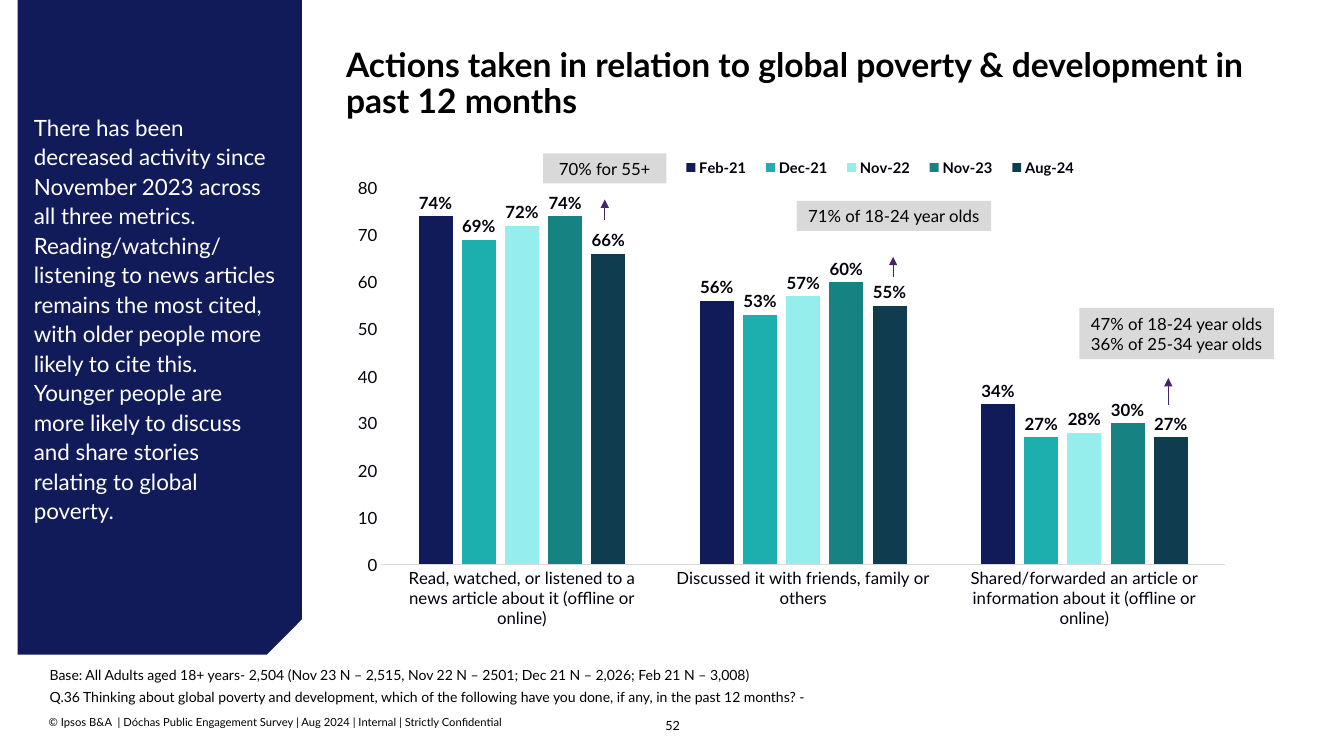
from pptx import Presentation
from pptx.chart.data import CategoryChartData
from pptx.dml.color import RGBColor
from pptx.enum.chart import XL_CHART_TYPE, XL_LABEL_POSITION, XL_LEGEND_POSITION, XL_TICK_MARK
from pptx.enum.shapes import MSO_CONNECTOR, MSO_SHAPE
from pptx.enum.text import MSO_ANCHOR, MSO_AUTO_SIZE, PP_ALIGN
from pptx.oxml import parse_xml
from pptx.oxml.ns import nsdecls, qn
from pptx.util import Pt
from lxml.etree import SubElement

FONT = "Lato"
BLACK = RGBColor(0x00, 0x00, 0x00)
WHITE = RGBColor(0xFF, 0xFF, 0xFF)
CHART_TEXT = RGBColor(0x00, 0x00, 0x0C)
GREY = RGBColor(0xD9, 0xD9, 0xD9)
NAVY = RGBColor(0x12, 0x1B, 0x5A)
PURPLE = RGBColor(0x45, 0x25, 0x67)

CATEGORIES = [
    "Read, watched, or listened to a news article about it (offline or online)",
    "Discussed it with friends, family or others",
    "Shared/forwarded an article or information about it (offline or online)",
]
WAVES = [
    ("Feb-21", (74, 56, 34), NAVY),
    ("Dec-21", (69, 53, 27), RGBColor(0x1D, 0xAF, 0xAD)),
    ("Nov-22", (72, 57, 28), RGBColor(0x96, 0xEE, 0xEC)),
    ("Nov-23", (74, 60, 30), RGBColor(0x16, 0x83, 0x82)),
    ("Aug-24", (66, 55, 27), RGBColor(0x10, 0x3C, 0x50)),
]
# Callout lines, box (left, top, width, height), arrow (x, start y, end y)
CALLOUTS = [
    (["70% for 55+"], (388, 109.5, 88, 21.5), (432, 157, 142.5)),
    (["71% of 18-24 year olds"], (569, 143.5, 139, 21.5), (638, 198, 183.5)),
    (["47% of 18-24 year olds", "36% of 25-34 year olds"], (771, 220, 139, 36.5), (834.5, 289, 270)),
]
SUMMARY = (
    "There has been decreased activity since November 2023 across all three metrics. "
    "Reading/watching/ listening to news articles remains the most cited, with older people "
    "more likely to cite this. Younger people are more likely to discuss and share stories "
    "relating to global poverty."
)
NOTES = [
    "Base: All Adults aged 18+ years- 2,504 (Nov 23 N – 2,515, Nov 22 N – 2501; "
    "Dec 21 N – 2,026; Feb 21 N – 3,008)",
    "Q.36 Thinking about global poverty and development, which of the following have you done, "
    "if any, in the past 12 months? -",
]
COPYRIGHT = "© Ipsos B&A  | Dóchas Public Engagement Survey | Aug 2024 | Internal | Strictly Confidential"


def format_font(font, size, color=BLACK, bold=False):
    font.name = FONT
    font.size = Pt(size)
    font.bold = bold
    font.color.rgb = color


def place(shape, left, top, width, height):
    shape.left, shape.top, shape.width, shape.height = map(Pt, (left, top, width, height))


def write(shape, lines, size, color=BLACK, bold=False, align=PP_ALIGN.LEFT, anchor=MSO_ANCHOR.MIDDLE,
          spacing=1.0, after=0, margins=(7.2, 3.6, 7.2, 3.6), wrap=True):
    frame = shape.text_frame
    frame.auto_size = MSO_AUTO_SIZE.NONE
    frame.word_wrap = wrap
    frame.vertical_anchor = anchor
    frame.margin_left, frame.margin_top, frame.margin_right, frame.margin_bottom = map(Pt, margins)
    for index, line in enumerate(lines):
        paragraph = frame.add_paragraph() if index else frame.paragraphs[0]
        paragraph.text = line
        paragraph.alignment = align
        paragraph.line_spacing = spacing
        paragraph.space_before = Pt(0)
        paragraph.space_after = Pt(after)
        properties = paragraph._p.get_or_add_pPr()
        properties.set("marL", "0")
        properties.set("indent", "0")
        SubElement(properties, qn("a:buNone"))
        format_font(paragraph.font, size, color, bold)


def add_text(slide, box, lines, size, **formatting):
    write(slide.shapes.add_textbox(*map(Pt, box)), lines, size, margins=(0, 0, 0, 0), **formatting)


def add_filled_shape(slide, kind, box, color):
    shape = slide.shapes.add_shape(kind, *map(Pt, box))
    shape.shadow.inherit = False
    shape.fill.solid()
    shape.fill.fore_color.rgb = color
    shape.line.fill.background()
    return shape


def add_summary_panel(slide):
    """Turn the shape so its cut corner is bottom right, and turn the text back upright."""
    panel = add_filled_shape(slide, MSO_SHAPE.SNIP_1_RECTANGLE, (-120.25, 131.75, 468.75, 203), NAVY)
    panel.rotation = 90
    panel.adjustments[0] = 0.124
    write(panel, [SUMMARY], 16, color=WHITE, spacing=1.1, margins=(11.5, 5.75, 11.5, 11.5))
    panel.text_frame._txBody.bodyPr.set("vert", "vert270")


def add_arrow(slide, x, start, end):
    arrow = slide.shapes.add_connector(MSO_CONNECTOR.STRAIGHT, Pt(x), Pt(start), Pt(x), Pt(end))
    arrow.line.color.rgb = PURPLE
    arrow.line.width = Pt(0.5)
    SubElement(arrow.line._get_or_add_ln(), qn("a:tailEnd"), type="triangle")
    SubElement(arrow._element.spPr, qn("a:effectLst"))


def add_callout(slide, lines, box, arrow):
    callout = add_filled_shape(slide, MSO_SHAPE.RECTANGLE, box, GREY)
    write(callout, lines, 12, align=PP_ALIGN.CENTER, wrap=False)
    add_arrow(slide, *arrow)


def set_layout(element, before, left, top, width, height, inner=False):
    """Fix a chart part at fractions of the chart area."""
    for old in element.findall(qn("c:layout")):
        element.remove(old)
    values = {"xMode": "edge", "yMode": "edge", "x": left, "y": top, "w": width, "h": height}
    target = '<c:layoutTarget val="inner"/>' if inner else ""
    parts = "".join(f'<c:{name} val="{value}"/>' for name, value in values.items())
    layout = parse_xml(
        f'<c:layout {nsdecls("c")}><c:manualLayout>{target}{parts}</c:manualLayout></c:layout>')
    element.find(qn(before)).addprevious(layout)


def format_axes(chart):
    for axis in (chart.category_axis, chart.value_axis):
        axis.major_tick_mark = axis.minor_tick_mark = XL_TICK_MARK.NONE
        axis.has_major_gridlines = False
        format_font(axis.tick_labels.font, 12, CHART_TEXT)
    chart.category_axis.format.line.color.rgb = GREY
    chart.category_axis.format.line.width = Pt(0.75)
    chart.value_axis.format.line.fill.background()
    chart.value_axis.minimum_scale, chart.value_axis.maximum_scale = 0, 80
    chart.value_axis.major_unit = 10


def add_actions_chart(slide):
    data = CategoryChartData()
    data.categories = CATEGORIES
    for name, values, _ in WAVES:
        data.add_series(name, values)
    box = map(Pt, (240, 105, 648, 368))
    chart = slide.shapes.add_chart(XL_CHART_TYPE.COLUMN_CLUSTERED, *box, data).chart
    format_font(chart.font, 12, CHART_TEXT, True)
    chart.has_title = False
    format_axes(chart)

    plot = chart.plots[0]
    plot.vary_by_categories = False
    plot.gap_width, plot.overlap = 219, -27
    for series, (_, _, color) in zip(plot.series, WAVES):
        series.format.fill.solid()
        series.format.fill.fore_color.rgb = color
        labels = series.data_labels
        labels.show_value = True
        labels.position = XL_LABEL_POSITION.OUTSIDE_END
        labels.number_format = '#"%"'
        labels.number_format_is_linked = False
        format_font(labels.font, 12, CHART_TEXT, True)

    chart.has_legend = True
    chart.legend.position = XL_LEGEND_POSITION.BOTTOM
    chart.legend.include_in_layout = False
    format_font(chart.legend.font, 10.5, CHART_TEXT, True)
    set_layout(chart.legend._element, "c:overlay", 0.37, 0.01, 0.46, 0.06)
    plot_area = chart._chartSpace.chart.plotArea
    set_layout(plot_area, "c:barChart", 0.05, 0.08, 0.93, 0.73, inner=True)


def main():
    presentation = Presentation()
    presentation.slide_width, presentation.slide_height = Pt(960), Pt(540)
    slide = presentation.slides.add_slide(presentation.slide_layouts[1])
    title, notes = slide.placeholders
    place(title, 240, 32.5, 690, 56)
    write(title, ["Actions taken in relation to global poverty & development in past 12 months"],
          24, bold=True, spacing=0.9)
    place(notes, 35.5, 474, 736, 26)
    write(notes, NOTES, 10, anchor=MSO_ANCHOR.TOP, spacing=1.15, after=2, margins=(0, 0, 0, 0))
    add_actions_chart(slide)
    for callout in CALLOUTS:
        add_callout(slide, *callout)
    add_summary_panel(slide)
    add_text(slide, (34.75, 511, 439, 9.5), [COPYRIGHT], 8, anchor=MSO_ANCHOR.BOTTOM)
    add_text(slide, (461, 513, 39, 11), ["52"], 9, align=PP_ALIGN.CENTER)
    presentation.save("out.pptx")


if __name__ == "__main__":
    main()
